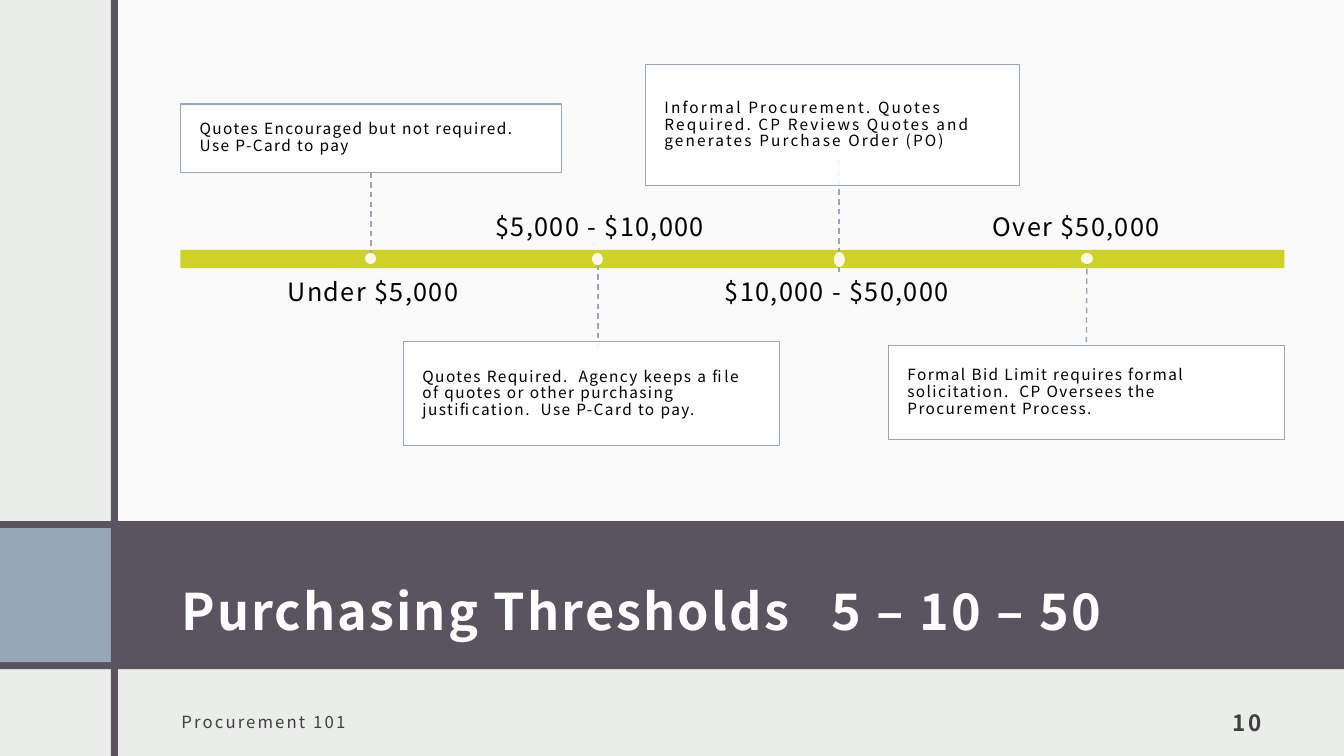
from dataclasses import dataclass

from lxml import etree
from pptx import Presentation
from pptx.dml.color import RGBColor
from pptx.enum import dml, shapes, text
from pptx.oxml.ns import qn
from pptx.util import Inches, Pt


@dataclass(frozen=True)
class Theme:
    font: str = "Noto Sans CJK JP"
    paper: str = "EBEDEB"
    white: str = "FFFFFF"
    dark: str = "595460"
    steel: str = "97A7B8"
    lime: str = "CED228"
    ink: str = "000000"
    grey: str = "404040"
    title_size: int = 36
    label_size: int = 18
    number_size: int = 16
    footer_size: int = 12
    note_size: int = 11


LEFT, CENTER, RIGHT = text.PP_ALIGN.LEFT, text.PP_ALIGN.CENTER, text.PP_ALIGN.RIGHT
TOP, MIDDLE, BOTTOM = text.MSO_ANCHOR.TOP, text.MSO_ANCHOR.MIDDLE, text.MSO_ANCHOR.BOTTOM
RECTANGLE, OVAL = shapes.MSO_SHAPE.RECTANGLE, shapes.MSO_SHAPE.OVAL
FRAME_INSETS = (0.12, 0.12, 0.12, 0.1)


class SlideBuilder:
    def __init__(self, page, theme):
        self.page = page
        self.theme = theme

    def background(self, color):
        fill = self.page.background.fill
        fill.solid()
        fill.fore_color.rgb = RGBColor.from_string(color)

    def shape(self, area, color, opacity=100, outline=None, kind=RECTANGLE):
        shape = self.page.shapes.add_shape(kind, *map(Inches, area))
        shape.shadow.inherit = False
        shape.fill.solid()
        shape.fill.fore_color.rgb = RGBColor.from_string(color)
        if opacity < 100:
            tint = shape._element.spPr.find(qn("a:solidFill"))[0]
            etree.SubElement(tint, qn("a:alpha"), val=str(opacity * 1000))
        if outline:
            shape.line.color.rgb = RGBColor.from_string(outline)
            shape.line.width = Pt(1)
        else:
            shape.line.fill.background()
        return shape

    def set_text(self, shape, wording, size, color, align=LEFT, anchor=MIDDLE,
                 insets=(0, 0, 0, 0), bold=False, tracking=1, spacing=1.0):
        """Fill a shape with one styled paragraph; tracking is in points."""
        frame = shape.text_frame
        frame.word_wrap = True
        frame.auto_size = text.MSO_AUTO_SIZE.NONE
        frame.vertical_anchor = anchor
        (frame.margin_left, frame.margin_top,
         frame.margin_right, frame.margin_bottom) = map(Inches, insets)
        paragraph = frame.paragraphs[0]
        paragraph.text = wording
        paragraph.alignment = align
        paragraph.line_spacing = spacing
        font = paragraph.font
        font.name, font.size, font.bold = self.theme.font, Pt(size), bold
        font.color.rgb = RGBColor.from_string(color)
        paragraph._p.pPr.find(qn("a:defRPr")).set("spc", str(int(tracking * 100)))

    def text_box(self, area, wording, size, color, **style):
        box = self.page.shapes.add_textbox(*map(Inches, area))
        self.set_text(box, wording, size, color, **style)

    def title(self, area, wording):
        title = self.page.shapes.title
        title.left, title.top, title.width, title.height = map(Inches, area)
        self.set_text(title, wording, self.theme.title_size, self.theme.white,
                      insets=FRAME_INSETS, bold=True, tracking=1.5, spacing=1.5)

    def dashed_line(self, x, top, bottom):
        line = self.page.shapes.add_connector(
            shapes.MSO_CONNECTOR.STRAIGHT, *map(Inches, (x, top, x, bottom)))
        line.line.color.rgb = RGBColor.from_string(self.theme.steel)
        line.line.width = Pt(1)
        line.line.dash_style = dml.MSO_LINE.DASH
        etree.SubElement(line._element.spPr, qn("a:effectLst"))
        return line

    def milestone(self, label, label_area, note, note_area, stem, dot,
                  above, joined=False, tracking=1, inset=0.06):
        """Place a stem, note, label and dot; above puts the note over the bar."""
        theme = self.theme
        line = self.dashed_line(*stem)
        box = self.shape(note_area, theme.white, 90, theme.steel)
        self.set_text(box, note, theme.note_size, theme.ink, tracking=tracking,
                      insets=(0.19, inset, 0.19, inset), spacing=0.9)
        if joined and above:
            line.begin_connect(box, 2)
        elif joined:
            line.end_connect(box, 0)
        self.text_box(label_area, label, theme.label_size, theme.ink,
                      align=CENTER, anchor=TOP if above else BOTTOM)
        self.shape(dot, theme.white, 90, kind=OVAL)


def main():
    theme = Theme()
    deck = Presentation()
    deck.slide_width, deck.slide_height = Inches(13.33), Inches(7.5)
    slide = SlideBuilder(deck.slides.add_slide(deck.slide_layouts[5]), theme)

    slide.background(theme.paper)
    slide.shape((1.14, 0, 12.19, 5.17), theme.white, 75)
    slide.shape((0, 5.17, 13.33, 1.47), theme.dark)
    slide.shape((0, 5.24, 1.1, 1.33), theme.steel)
    slide.shape((1.1, 0, 0.07, 7.5), theme.dark)

    # The title placeholder comes first in the tree, so bring it in front of the band.
    tree = slide.page.shapes._spTree
    tree.append(slide.page.shapes.title._element)
    slide.title((1.68, 5.33, 10.95, 1.13), "Purchasing Thresholds   5 – 10 – 50")
    slide.text_box((1.68, 6.9, 5.41, 0.5), "Procurement 101", theme.footer_size,
                   theme.grey, insets=FRAME_INSETS, tracking=1.5)
    slide.text_box((11.56, 6.9, 1.07, 0.5), "10", theme.number_size, theme.grey,
                   align=RIGHT, anchor=BOTTOM, insets=FRAME_INSETS, bold=True, tracking=1.5)

    slide.shape((1.79, 2.48, 10.95, 0.18), theme.lime)
    slide.milestone(
        "Under $5,000", (1.95, 2.74, 3.5, 0.51),
        "Quotes Encouraged but not required. Use P-Card to pay", (1.79, 1.03, 3.78, 0.68),
        stem=(3.68, 1.71, 2.57), dot=(3.62, 2.51, 0.11, 0.11),
        above=True, joined=True, inset=0.04)
    slide.milestone(
        "$5,000 - $10,000", (4.2, 1.89, 3.5, 0.51),
        "Quotes Required.  Agency keeps a file of quotes or other purchasing "
        "justification.  Use P-Card to pay.", (4, 3.39, 3.73, 1.03),
        stem=(5.93, 2.53, 3.47), dot=(5.87, 2.51, 0.11, 0.12), above=False)
    slide.milestone(
        "$10,000 - $50,000", (6.55, 2.74, 3.5, 0.51),
        "Informal Procurement. Quotes Required. CP Reviews Quotes and "
        "generates Purchase Order (PO)", (6.4, 0.64, 3.71, 1.2),
        stem=(8.32, 1.59, 2.7), dot=(8.27, 2.5, 0.11, 0.15), above=True, tracking=1.5)
    slide.milestone(
        "Over $50,000 ", (8.96, 1.89, 3.5, 0.51),
        "Formal Bid Limit requires formal solicitation.  CP Oversees the "
        "Procurement Process.", (8.81, 3.43, 3.93, 0.93),
        stem=(10.78, 2.57, 3.43), dot=(10.72, 2.51, 0.12, 0.11),
        above=False, joined=True)

    deck.save("out.pptx")


if __name__ == "__main__":
    main()
